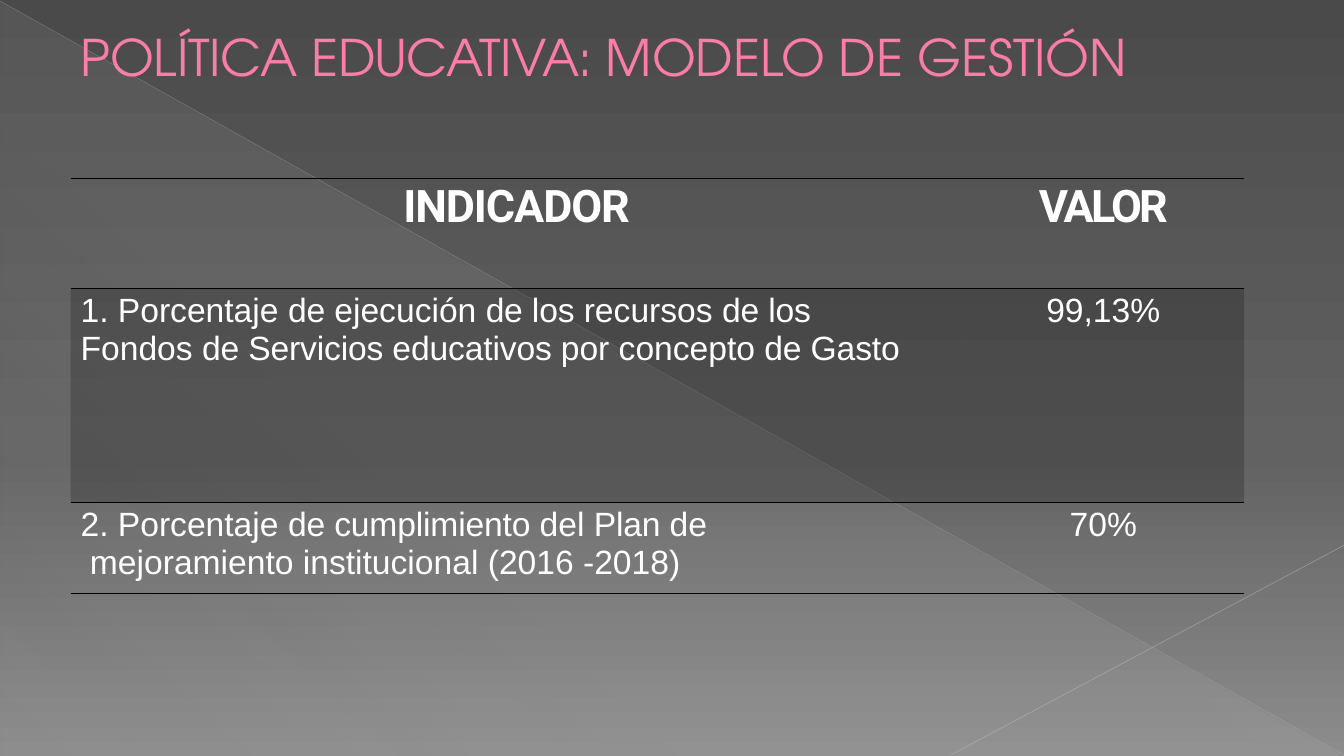
import pptx
import pptx.util
import pptx.dml.color
import pptx.enum.text
import pptx.enum.shapes
import pptx.oxml
import pptx.oxml.ns
from lxml import etree

Inches, Pt = pptx.util.Inches, pptx.util.Pt
RGBColor = pptx.dml.color.RGBColor
PP_ALIGN = pptx.enum.text.PP_ALIGN
qn = pptx.oxml.ns.qn

W, H = 13.33, 7.5
WHITE = RGBColor(0xFF, 0xFF, 0xFF)
BLACK = RGBColor(0x00, 0x00, 0x00)
PINK = RGBColor(0xFF, 0x7D, 0xA7)
PLUM = RGBColor(0xB1, 0x27, 0x61)
MIST = RGBColor(0xD2, 0xD2, 0xD2)
SILVER = RGBColor(0xBF, 0xBF, 0xBF)
PALE = RGBColor(0xC6, 0xC6, 0xC6)
BACKDROP = [(0, RGBColor(0x4A, 0x4A, 0x4A), 100),
            (60, RGBColor(0x62, 0x62, 0x62), 100),
            (100, RGBColor(0x8C, 0x8C, 0x8C), 100)]
NO_STYLE = "{2D5ABB26-0587-4C30-8999-92F81FD0307C}"

# Runs are (text, letter spacing in points); "\n" starts a new line
TITLE = [("POLÍTICA ", -0.1), ("EDUCATIVA: ", -0.6), ("MODELO DE ", 0), ("GESTIÓN", -0.1)]
HEADERS = [[("INDICADOR", -0.8)], [("VALOR", -2.1)]]
ROWS = [
    [[("1. Porcentaje ", 0), ("de ", -0.1), ("ejecución ", 0), ("de los ", -0.1),
      ("recursos ", 0), ("de los ", -0.1), ("\n", 0), ("Fondos ", 0),
      ("de Servicios educativos ", -0.1), ("por concepto ", 0), ("de Gasto", -0.1)],
     [("99,13%", 0)]],
    [[("2. Porcentaje ", 0), ("de cumplimiento ", -0.1), ("del ", 0), ("Plan de ", -0.1),
      ("\n", 0), (" mejoramiento institucional (2016 -2018)", 0)],
     [("70%", 0)]],
]


def add_child(parent, tag, **attrs):
    return etree.SubElement(parent, qn(tag), {k: str(v) for k, v in attrs.items()})


def add_color(parent, color, alpha=100):
    clr = add_child(parent, "a:srgbClr", val=color)
    if alpha < 100:
        add_child(clr, "a:alpha", val=alpha * 1000)


def set_gradient(fill, owner, stops, angle):
    """Fill owner's gradient with (position, colour, opacity) stops."""
    fill.gradient()
    grad = next(owner.iter(qn("a:gradFill")))
    for child in list(grad):
        grad.remove(child)
    gs_lst = add_child(grad, "a:gsLst")
    for pos, color, alpha in stops:
        add_color(add_child(gs_lst, "a:gs", pos=pos * 1000), color, alpha)
    add_child(grad, "a:lin", ang=angle * 60000, scaled=0)


def write(p, runs, font, size, color, bold=False, align=PP_ALIGN.LEFT,
          before=0, indent=0, outline=None):
    p.alignment, p.space_before = align, Pt(before)
    p_pr = p._p.get_or_add_pPr()
    p_pr.set("marL", str(Inches(indent)))
    p_pr.set("indent", "0")
    for text, spacing in runs:
        if text == "\n":
            p.add_line_break()
            continue
        r = p.add_run()
        r.text = text
        r.font.name, r.font.size, r.font.bold = font, Pt(size), bold
        r.font.color.rgb = color
        r_pr = r._r.get_or_add_rPr()
        r_pr.set("spc", str(round(spacing * 100)))
        if outline is not None:
            ln = pptx.oxml.parse_xml('<a:ln %s w="6350"/>' % pptx.oxml.ns.nsdecls("a"))
            add_color(add_child(ln, "a:solidFill"), outline)
            r_pr.insert(0, ln)


def add_backdrop(slide, w, h):
    bg = slide.background
    set_gradient(bg.fill, slide._element, BACKDROP, 90)
    # Translucent triangle over the lower left half
    sp = slide.shapes.add_shape(pptx.enum.shapes.MSO_SHAPE.RIGHT_TRIANGLE,
                                Inches(0.01), Inches(0.02), Inches(w - 0.02), Inches(h - 0.02))
    sp.shadow.inherit = False
    sp.line.fill.background()
    set_gradient(sp.fill, sp._element, [(0, MIST, 10), (70, MIST, 8), (100, MIST, 1)], 133)
    # Diagonal hairlines
    for x1, y1, x2, y2, color, width, alpha in [
            (0, 0.01, w, h - 0.01, SILVER, 0.39, 35),
            (w, 5.41, 9.43, h - 0.01, PALE, 0.47, 45)]:
        line = slide.shapes.add_connector(pptx.enum.shapes.MSO_CONNECTOR.STRAIGHT,
                                          Inches(x1), Inches(y1), Inches(x2), Inches(y2))
        line.line.color.rgb, line.line.width = color, Pt(width)
        clr = next(line._element.spPr.iter(qn("a:srgbClr")))
        add_child(clr, "a:alpha", val=alpha * 1000)
        add_child(line._element.spPr, "a:effectLst")


def add_title(slide, x, y, w, h):
    title = slide.shapes.title
    slide.shapes._spTree.append(title._element)  # in front of the backdrop
    title.left, title.top, title.width, title.height = map(Inches, (x, y, w, h))
    tf = title.text_frame
    tf.word_wrap = True
    tf.auto_size = pptx.enum.text.MSO_AUTO_SIZE.SHAPE_TO_FIT_TEXT
    tf.vertical_anchor = pptx.enum.text.MSO_ANCHOR.MIDDLE
    tf.margin_left = tf.margin_right = tf.margin_bottom = 0
    tf.margin_top = Inches(0.01)
    write(tf.paragraphs[0], TITLE, "TeX Gyre Adventor", 36, PINK,
          before=1, indent=0.01, outline=PLUM)


def style_cell(cell, edges, shaded, top):
    cell.margin_left = cell.margin_right = cell.margin_bottom = 0
    cell.margin_top = Inches(top)
    tc_pr = cell._tc.get_or_add_tcPr()
    for edge in edges:
        ln = add_child(tc_pr, edge, w=Pt(1))
        add_color(add_child(ln, "a:solidFill"), BLACK)
    if shaded:
        cell.fill.solid()
        cell.fill.fore_color.rgb = BLACK
        clr = tc_pr.find(qn("a:solidFill")).find(qn("a:srgbClr"))
        add_child(clr, "a:alpha", val=20000)
    else:
        cell.fill.background()


def add_indicators(slide, x, y, w, h):
    col_shares, row_shares = (0.76, 0.24), (0.265, 0.515, 0.22)
    data = [HEADERS] + ROWS
    table = slide.shapes.add_table(len(data), len(HEADERS),
                                   *map(Inches, (x, y, w, h))).table
    table.first_row = table.horz_banding = False
    table._tbl.tblPr.find(qn("a:tableStyleId")).text = NO_STYLE
    for col, share in zip(table.columns, col_shares):
        col.width = Inches(w * share)
    for i, (row, share) in enumerate(zip(data, row_shares)):
        table.rows[i].height = Inches(h * share)
        edges = ["a:lnT", "a:lnB"] if i == len(data) - 1 else ["a:lnT"]
        for j, runs in enumerate(row):
            cell = table.cell(i, j)
            style_cell(cell, edges, shaded=i == 1, top=0.04 if i else 0.02)
            p = cell.text_frame.paragraphs[0]
            if i == 0:
                write(p, runs, "Roboto", 32, WHITE, bold=True,
                      align=PP_ALIGN.CENTER, before=1.6)
            elif j == 0:
                write(p, runs, "Arial", 24, WHITE, before=3, indent=0.1)
            else:
                write(p, runs, "Arial", 24, WHITE, align=PP_ALIGN.CENTER, before=3)


def main():
    prs = pptx.Presentation()
    prs.slide_width, prs.slide_height = Inches(W), Inches(H)
    slide = prs.slides.add_slide(prs.slide_layouts[5])
    add_backdrop(slide, W, H)
    add_title(slide, 0.79, 0.24, 11.05, 0.63)
    add_indicators(slide, 0.7, 1.77, 11.64, 4.12)
    prs.save("out.pptx")


if __name__ == "__main__":
    main()
